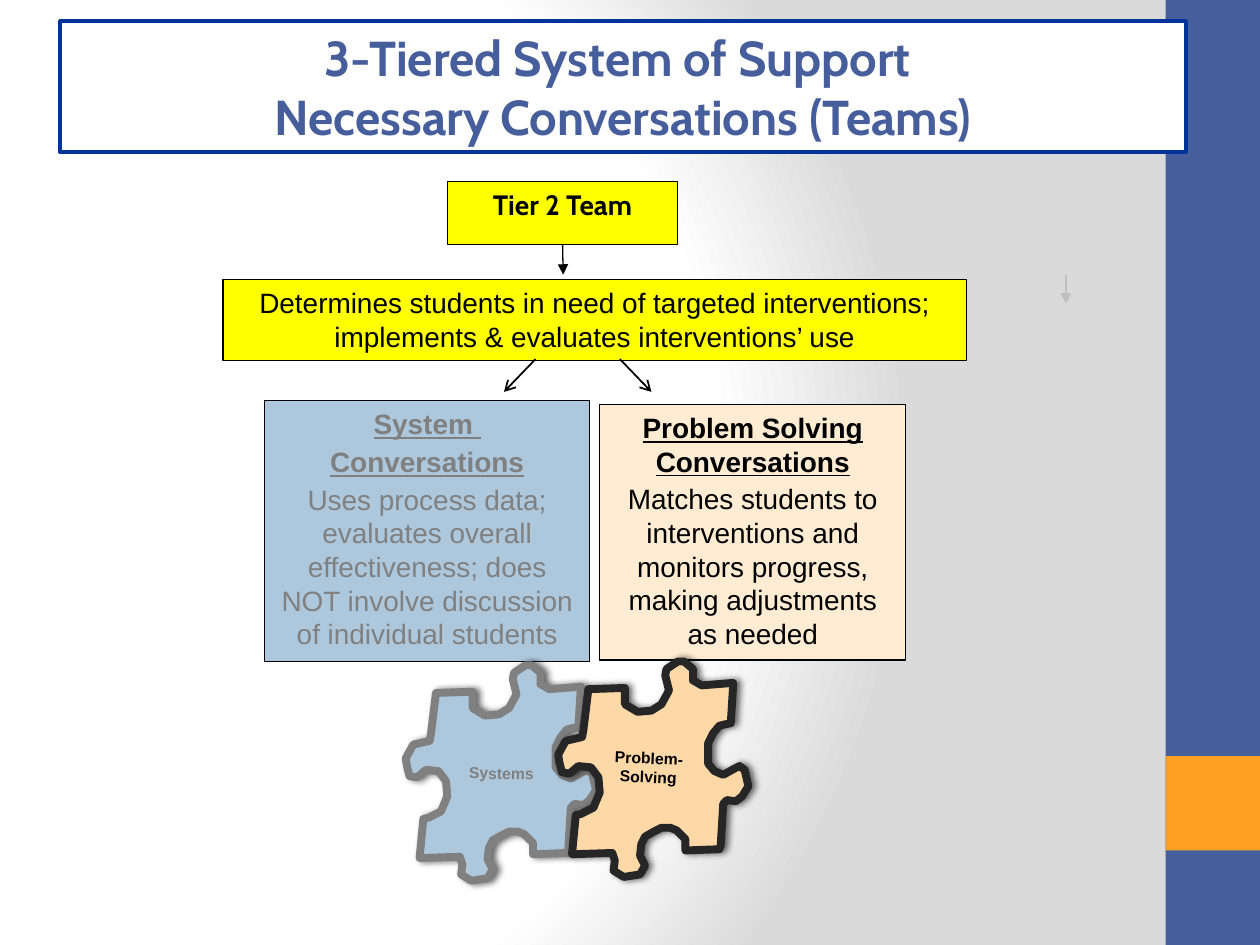
from lxml import etree
from pptx import Presentation
from pptx.dml.color import RGBColor
from pptx.enum.shapes import MSO_CONNECTOR as Connector, MSO_SHAPE as Shape
from pptx.enum.text import MSO_ANCHOR as Anchor, PP_ALIGN as Align
from pptx.oxml import parse_xml
from pptx.oxml.ns import qn
from pptx.util import Inches, Pt

deck = Presentation()
deck.slide_width, deck.slide_height = Inches(10), Inches(7.5)
unit = deck.slide_width / 10
slide = deck.slides.add_slide(deck.slide_layouts[6])


def paint(fill, color):
    fill.solid()
    fill.fore_color.rgb = RGBColor.from_string(color)


def write(frame, paragraphs, font, size, color):
    frame.word_wrap = True
    frame.vertical_anchor = Anchor.TOP
    for index, (words, bold, underline, gap) in enumerate(paragraphs):
        paragraph = frame.paragraphs[0] if index == 0 else frame.add_paragraph()
        paragraph.alignment = Align.CENTER
        paragraph.space_before = Pt(gap)
        run = paragraph.add_run()
        run.text = words
        run.font.name, run.font.size = font, Pt(size)
        run.font.bold, run.font.underline = bold, underline
        paint(run.font.fill, color)


drawing_ns = "http://schemas.openxmlformats.org/drawingml/2006/main"
slide_ns = "http://schemas.openxmlformats.org/presentationml/2006/main"
stops = "".join(
    f'<a:gs pos="{share * 1000}"><a:srgbClr val="{color}"/></a:gs>'
    for share, color in [(0, "FFFFFF"), (75, "FFFFFF"), (100, "DADADA")]
)
slide.element.cSld.insert(0, parse_xml(
    f'<p:bg xmlns:p="{slide_ns}" xmlns:a="{drawing_ns}"><p:bgPr><a:gradFill>'
    f'<a:gsLst>{stops}</a:gsLst><a:path path="circle">'
    '<a:fillToRect l="20000" t="50000" r="100000" b="50000"/></a:path>'
    '</a:gradFill><a:effectLst/></p:bgPr></p:bg>'
))

gap = 2.4
boxes = [
    (9.25, 0, 0.75, 7.5, "465E9C", None, 0, [], "Arial", 16, "000000"),
    (9.25, 6, 0.75, 0.75, "FDA023", None, 0, [], "Arial", 16, "000000"),
    (2.1, 3.18, 2.58, 2.07, "ADC8DD", "000000", 0.75, [
        ("System ", True, True, gap),
        ("Conversations", True, True, gap),
        ("Uses process data; evaluates overall effectiveness; does NOT involve "
         "discussion of individual students", False, False, gap),
    ], "Arial", 16, "808080"),
    (4.76, 3.21, 2.43, 2.03, "FFECD3", "000000", 0.75, [
        ("Problem Solving Conversations", True, True, gap),
        ("Matches students to interventions and monitors progress, making "
         "adjustments as needed", False, False, gap),
    ], "Arial", 16, "000000"),
    (0.48, 0.17, 8.93, 1.04, "FFFFFF", "003399", 2.25, [
        ("3-Tiered System of Support ", True, False, 0),
        ("Necessary Conversations (Teams)", True, False, 0),
    ], "Cabin", 28, "465E9C"),
    (1.77, 2.22, 5.9, 0.64, "FFFF00", "000000", 0.75, [
        ("Determines students in need of targeted interventions; implements & "
         "evaluates interventions’ use", False, False, 0),
    ], "Arial", 16, "000000"),
    (3.55, 1.44, 1.83, 0.5, "FFFF00", "000000", 0.75, [
        ("Tier 2 Team", True, False, 0),
    ], "Cabin", 16, "000000"),
]
for left, top, width, height, fill, border, weight, paragraphs, font, size, color in boxes:
    box = slide.shapes.add_shape(
        Shape.RECTANGLE, *(int(n * unit) for n in (left, top, width, height)))
    box.shadow.inherit = False
    paint(box.fill, fill)
    if border:
        paint(box.line.fill, border)
        box.line.width = Pt(weight)
    else:
        box.line.fill.background()
    if paragraphs:
        write(box.text_frame, paragraphs, font, size, color)
team = box

arrows = [
    (8.46, 2.18, 8.46, 2.41, "BFBFBF", 0.75, "triangle", None),
    (4.25, 2.85, 4, 3.11, "000000", 1, "arrow", None),
    (4.92, 2.85, 5.17, 3.11, "000000", 1, "arrow", None),
    (4.47, 1.94, 4.47, 2.18, "000000", 0.75, "triangle", team),
]
for x1, y1, x2, y2, color, weight, head, source in arrows:
    arrow = slide.shapes.add_connector(
        Connector.STRAIGHT, *(int(n * unit) for n in (x1, y1, x2, y2)))
    if source:
        arrow.begin_connect(source, 2)
    paint(arrow.line.fill, color)
    arrow.line.width = Pt(weight)
    etree.SubElement(arrow.line._get_or_add_ln(), qn("a:tailEnd"), type=head)
    etree.SubElement(arrow._element.spPr, qn("a:effectLst"))

outline = [
    (139, 17), (137, 49), (132, 50), (128, 51), (123, 57), (119, 65), (119, 71),
    (119, 81), (124, 87), (131, 90), (140, 85), (144, 83), (148, 86), (151, 99),
    (146, 107), (141, 111), (134, 110), (131, 113), (129, 146), (128, 149),
    (101, 150), (101, 141), (94, 134), (89, 132), (82, 132), (76, 135), (69, 139),
    (66, 145), (65, 154), (69, 162), (65, 169), (52, 171), (44, 166), (45, 158),
    (43, 152), (11, 153), (14, 122), (18, 121), (28, 116), (33, 104), (32, 92),
    (26, 84), (16, 83), (9, 89), (3, 88), (1, 80), (0, 74), (6, 63), (19, 60),
    (20, 55), (24, 22), (53, 21), (53, 34), (63, 40), (74, 39), (82, 34), (88, 23),
    (85, 11), (86, 6), (95, 0), (100, 0), (107, 6), (107, 15), (114, 19),
]
pieces = [
    (3.22, 5.28, "ADC8DD", "808080", "Systems", (3.55, 6.01, 0.86, 0.25), 0.8, "808080"),
    (4.43, 5.25, "FED9A7", "262626", "Problem-Solving", (4.72, 5.89, 0.85, 0.56), 2.3, "000000"),
]
puzzle = slide.shapes.add_group_shape()
for left, top, fill, border, words, place, turn, color in pieces:
    builder = puzzle.shapes.build_freeform(*outline[0], scale=unit / 100)
    builder.add_line_segments(outline[1:], close=True)
    piece = builder.convert_to_shape(int(left * unit), int(top * unit))
    paint(piece.fill, fill)
    paint(piece.line.fill, border)
    piece.line.width = Pt(4.5)
    piece.shadow.inherit = False
    piece._element.spPr.find(qn("a:effectLst")).append(parse_xml(
        f'<a:outerShdw xmlns:a="{drawing_ns}" blurRad="{Pt(4)}" dist="{Pt(2)}" dir="0">'
        '<a:srgbClr val="000000"><a:alpha val="60000"/></a:srgbClr></a:outerShdw>'
    ))
    label = puzzle.shapes.add_textbox(*(int(n * unit) for n in place))
    label.rotation = turn
    write(label.text_frame, [(words, True, False, 0)], "Arial", 9, color)

deck.save("out.pptx")
